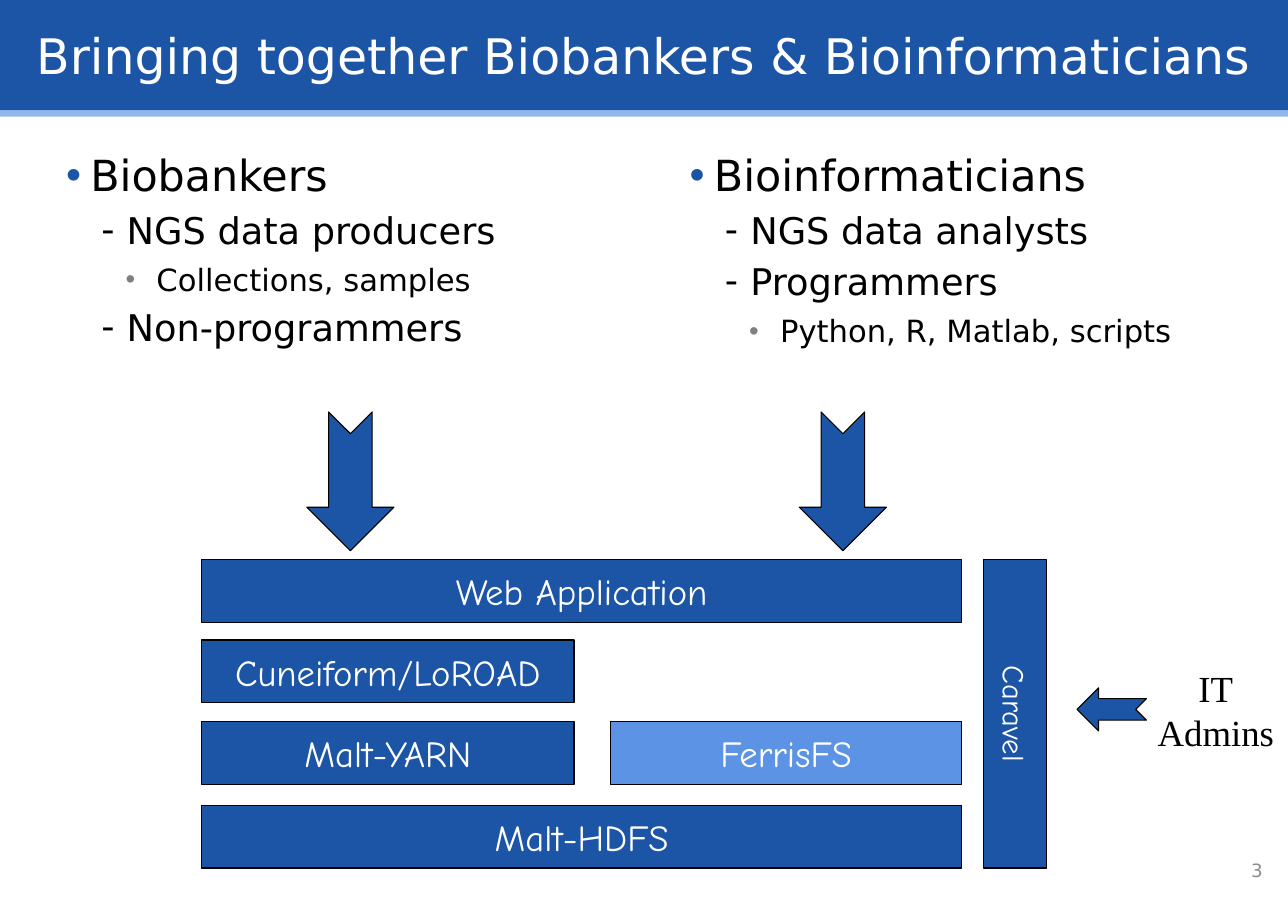
from lxml import etree
from pptx import Presentation
from pptx import util as u
from pptx.dml.color import RGBColor
from pptx.enum import shapes, text
from pptx.oxml.ns import qn

WIDTH, HEIGHT = 11.69, 8.27
BLUE, LIGHT, PALE = "1C54A6", "5D93E4", "93B7ED"
WHITE, BLACK, GREY, NUMBER = "FFFFFF", "000000", "808080", "8C8C8C"
SANS, COMIC, SERIF = "DejaVu Sans", "Comic Neue", "Times New Roman"
CENTER, RIGHT = text.PP_ALIGN.CENTER, text.PP_ALIGN.RIGHT

TITLE = "Bringing together Biobankers & Bioinformaticians"
LISTS = [
    ((0.5, 1.3, 5.03, 5.83), [
        (0, "Biobankers"), (1, "NGS data producers"),
        (2, "Collections, samples"), (1, "Non-programmers")]),
    ((6.16, 1.3, 5.53, 5.83), [
        (0, "Bioinformaticians"), (1, "NGS data analysts"),
        (1, "Programmers"), (2, "Python, R, Matlab, scripts")]),
]
LEVELS = [
    {"size": 28, "left": 0.22, "hang": 0.22, "mark": "•", "font": "Arial",
     "color": BLUE, "scale": 100},
    {"size": 24, "left": 0.55, "hang": 0.23, "mark": "-", "font": SANS,
     "color": BLACK, "scale": 100},
    {"size": 20, "left": 0.82, "hang": 0.28, "mark": "•", "font": "Arial",
     "color": GREY, "scale": 90},
]
ARROWS = [(3.18, 4.37, 1.26, 0.79, 90), (7.65, 4.37, 1.26, 0.79, 90),
          (10.09, 6.44, 0.63, 0.39, 180)]

LEFT, MIDDLE, EDGE = 1.83, 5.54, 8.73
HALF, FULL, REST = 3.38, EDGE - LEFT, EDGE - MIDDLE
ROWS, BLOCK = [5.08, 5.81, 6.55, 7.31], 0.57
BLOCKS = [
    ("Web Application", 0, LEFT, FULL, BLUE),
    ("Cuneiform/LoROAD", 1, LEFT, HALF, BLUE),
    ("Malt-YARN", 2, LEFT, HALF, BLUE),
    ("FerrisFS", 2, MIDDLE, REST, LIGHT),
    ("Malt-HDFS", 3, LEFT, FULL, BLUE),
]
SIDE_BLOCK, SIDE_CENTER = "Caravel", 9.21


def rgb(value):
    return RGBColor.from_string(value)


def place(shape, area):
    for name, value in zip(("left", "top", "width", "height"), area):
        setattr(shape, name, u.Inches(value))


def fill(shape, color):
    shape.fill.solid()
    shape.fill.fore_color.rgb = rgb(color)


def write(para, words, size, font, color, align=None):
    span = para.add_run()
    span.text = words
    for name, value in {"size": u.Pt(size), "name": font}.items():
        setattr(span.font, name, value)
    span.font.color.rgb = rgb(color)
    para.alignment = align


def frame(shape, **formats):
    for name, value in formats.items():
        setattr(shape.text_frame, name, value)
    return shape.text_frame


def bullet(para, style):
    props = para._p.get_or_add_pPr()
    props.set("marL", str(u.Inches(style["left"])))
    props.set("indent", str(-u.Inches(style["hang"])))
    color = etree.SubElement(props, qn("a:buClr"))
    etree.SubElement(color, qn("a:srgbClr"), val=style["color"])
    etree.SubElement(props, qn("a:buSzPct"), val=str(style["scale"] * 1000))
    etree.SubElement(props, qn("a:buFont"), typeface=style["font"])
    etree.SubElement(props, qn("a:buChar"), char=style["mark"])


def add_shape(page, kind, center, size, color, turn=0):
    (x, y), (width, height) = center, size
    shape = page.shapes.add_shape(kind, 0, 0, 0, 0)
    place(shape, (x - width / 2, y - height / 2, width, height))
    fill(shape, color)
    shape.shadow.inherit = False
    shape.rotation = turn
    shape.line.color.rgb = rgb(BLACK)
    shape.line.width = u.Pt(0.75)
    return shape


def add_block(page, words, center, size, color, points=24, turn=0):
    shape = add_shape(page, shapes.MSO_SHAPE.RECTANGLE, center, size, color, turn)
    box = frame(shape, vertical_anchor=text.MSO_ANCHOR.MIDDLE)
    write(box.paragraphs[0], words, points, COMIC, WHITE, CENTER)


def add_header(page):
    strip = page.shapes.add_shape(shapes.MSO_SHAPE.RECTANGLE, 0, 0, 0, 0)
    place(strip, (0, 0, WIDTH, 1.06))
    fill(strip, PALE)
    strip.line.fill.background()
    strip.shadow.inherit = False
    page.shapes._spTree.insert(2, strip._element)
    title = page.shapes.title
    place(title, (0, 0, WIDTH, 1))
    fill(title, BLUE)
    box = frame(title, auto_size=text.MSO_AUTO_SIZE.NONE,
                vertical_anchor=text.MSO_ANCHOR.MIDDLE)
    write(box.paragraphs[0], TITLE, 32, SANS, WHITE, CENTER)


def add_lists(page):
    for index, (area, items) in enumerate(LISTS, 1):
        body = page.placeholders[index]
        place(body, area)
        box = frame(body, auto_size=text.MSO_AUTO_SIZE.NONE)
        for row, (level, words) in enumerate(items):
            para = box.add_paragraph() if row else box.paragraphs[0]
            para.level = level
            if level == 2:
                para.space_before = u.Pt(6)
            style = LEVELS[level]
            write(para, words, style["size"], SANS, BLACK)
            bullet(para, style)


def add_stack(page):
    for words, row, left, width, color in BLOCKS:
        center = left + width / 2, ROWS[row] + BLOCK / 2
        add_block(page, words, center, (width, BLOCK), color)
    bottom = ROWS[-1] + BLOCK
    add_block(page, SIDE_BLOCK, (SIDE_CENTER, (ROWS[0] + bottom) / 2),
              (bottom - ROWS[0], BLOCK), BLUE, 20, 90)


def add_labels(page):
    admins = page.shapes.add_textbox(0, 0, 0, 0)
    place(admins, (10.4, 5.99, 1.27, 0.91))
    box = frame(admins, word_wrap=False)
    write(box.paragraphs[0], "IT", 24, SERIF, BLACK, CENTER)
    write(box.add_paragraph(), "Admins", 24, SERIF, BLACK, CENTER)
    number = page.shapes.add_textbox(0, 0, 0, 0)
    place(number, (8.83, 7.68, 2.73, 0.44))
    box = frame(number, word_wrap=True, vertical_anchor=text.MSO_ANCHOR.MIDDLE)
    write(box.paragraphs[0], "3", 12, SANS, NUMBER, RIGHT)


def main():
    deck = Presentation()
    deck.slide_width, deck.slide_height = u.Inches(WIDTH), u.Inches(HEIGHT)
    page = deck.slides.add_slide(deck.slide_layouts[3])
    add_header(page)
    add_lists(page)
    for x, y, length, breadth, turn in ARROWS:
        add_shape(page, shapes.MSO_SHAPE.NOTCHED_RIGHT_ARROW,
                  (x, y), (length, breadth), BLUE, turn)
    add_stack(page)
    add_labels(page)
    deck.save("out.pptx")


if __name__ == "__main__":
    main()
